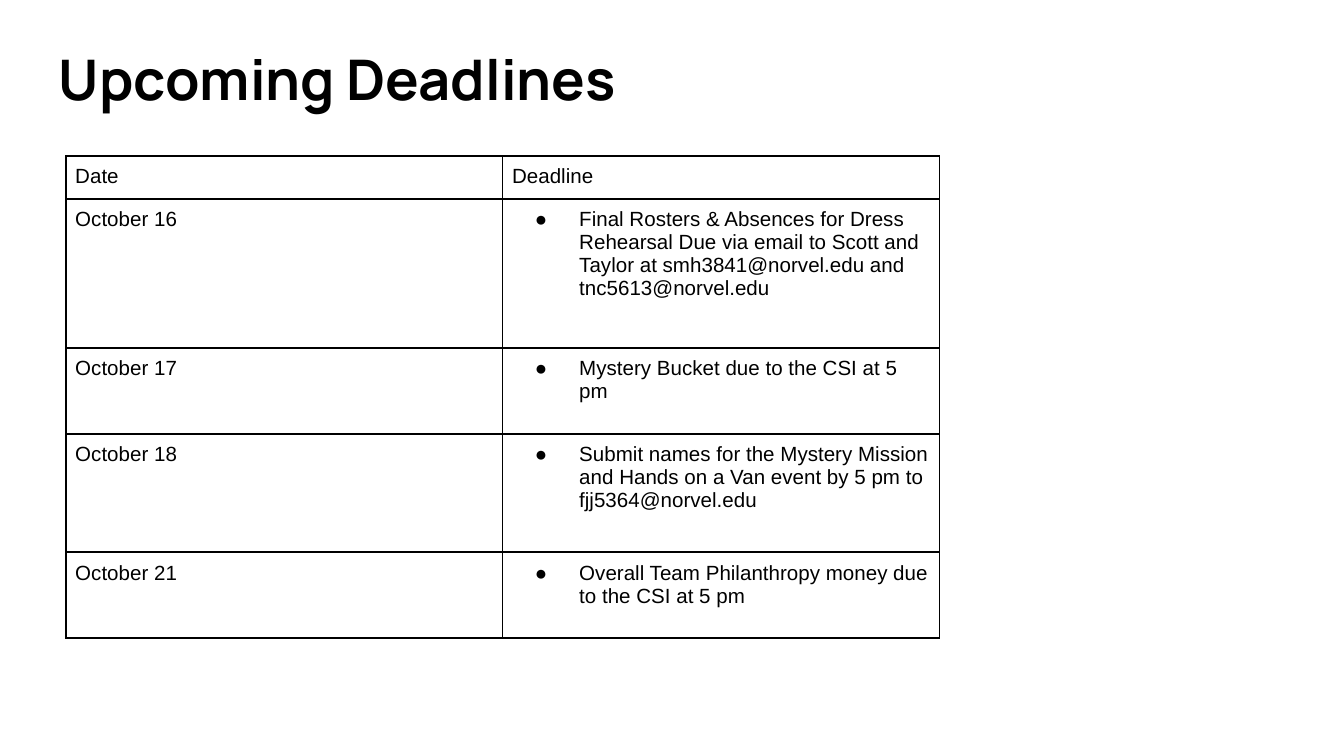
from lxml.etree import SubElement
from pptx import Presentation
from pptx.dml.color import RGBColor
from pptx.oxml.ns import qn
from pptx.util import Inches, Pt

TITLE = "Upcoming Deadlines"
HEADINGS = [("Date", "Deadline")]
DEADLINES = [
    ("October 16", "Final Rosters & Absences for Dress Rehearsal Due via email to Scott and "
                   "Taylor at smh3841@norvel.edu and tnc5613@norvel.edu"),
    ("October 17", "Mystery Bucket due to the CSI at 5 pm"),
    ("October 18", "Submit names for the Mystery Mission and Hands on a Van event by 5 pm to "
                   "fjj5364@norvel.edu"),
    ("October 21", "Overall Team Philanthropy money due to the CSI at 5 pm"),
]
HEADING_HEIGHTS = [0.01]
DEADLINE_HEIGHTS = [1.11, 0.64, 0.88, 0.64]
LEFT, COLUMN_WIDTH = 0.49, 3.25
BLACK = "000000"


def color(hex_value):
    return RGBColor.from_string(hex_value)


def style_text(paragraph, font_name, size, bold=False):
    for run in paragraph.runs:
        run.font.name = font_name
        run.font.size = Pt(size)
        run.font.bold = bold
        run.font.color.rgb = color(BLACK)


def add_bullet(paragraph):
    properties = paragraph._p.get_or_add_pPr()
    properties.set("marL", str(Inches(0.5)))
    properties.set("indent", str(Inches(-0.33)))
    SubElement(properties, qn("a:buFont"), typeface="Arial")
    SubElement(properties, qn("a:buChar"), char="●")


def add_borders(cell):
    properties = cell._tc.get_or_add_tcPr()
    for position, side in enumerate(("lnL", "lnR", "lnT", "lnB")):
        line = properties.makeelement(qn(f"a:{side}"), {"w": str(Pt(1))})
        fill = SubElement(line, qn("a:solidFill"))
        SubElement(fill, qn("a:srgbClr"), val=BLACK)
        properties.insert(position, line)


def add_grid(slide, rows, top, heights, bulleted=False):
    table = slide.shapes.add_table(
        len(rows), 2, Inches(LEFT), Inches(top),
        Inches(2 * COLUMN_WIDTH), Inches(sum(heights))).table
    table.first_row = table.horz_banding = False
    for column in table.columns:
        column.width = Inches(COLUMN_WIDTH)
    for r, (row, height) in enumerate(zip(rows, heights)):
        table.rows[r].height = Inches(height)
        for c, words in enumerate(row):
            cell = table.cell(r, c)
            cell.margin_left = cell.margin_right = Inches(0.07)
            cell.margin_top = cell.margin_bottom = Inches(0.07)
            cell.fill.background()
            add_borders(cell)
            cell.text_frame.text = words
            paragraph = cell.text_frame.paragraphs[0]
            style_text(paragraph, "Arial", 11)
            if bulleted and c == 1:
                add_bullet(paragraph)


def main():
    deck = Presentation()
    deck.slide_width = Inches(10)
    deck.slide_height = deck.slide_width * 9 // 16
    slide = deck.slides.add_slide(deck.slide_layouts[6])

    title = slide.shapes.add_textbox(Inches(0.34), Inches(0.23), Inches(9.32), Inches(0.68))
    frame = title.text_frame
    frame.word_wrap = True
    frame.margin_left = frame.margin_right = Inches(0.1)
    frame.margin_top = frame.margin_bottom = Inches(0.1)
    frame.text = TITLE
    style_text(frame.paragraphs[0], "Manrope", 30, bold=True)

    add_grid(slide, DEADLINES, 1.48, DEADLINE_HEIGHTS, bulleted=True)
    add_grid(slide, HEADINGS, 1.16, HEADING_HEIGHTS)
    deck.save("out.pptx")


if __name__ == "__main__":
    main()
